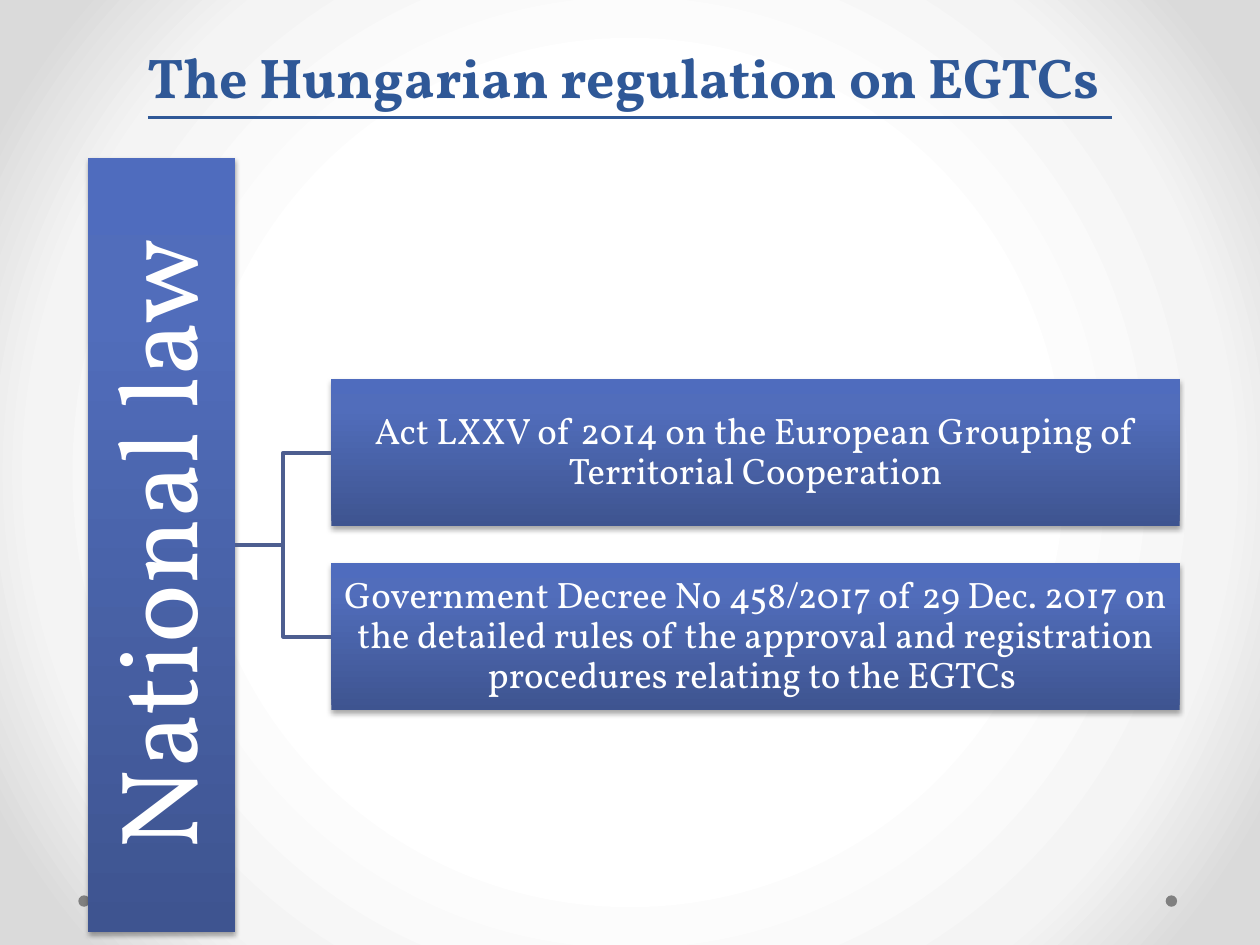
import pptx
import pptx.dml.color
import pptx.enum.shapes
import pptx.enum.text
import pptx.oxml
import pptx.oxml.ns
import pptx.util
from lxml import etree

Cm, Pt = pptx.util.Cm, pptx.util.Pt
SHAPE = pptx.enum.shapes.MSO_SHAPE
ANCHOR = pptx.enum.text.MSO_ANCHOR
qn = pptx.oxml.ns.qn
NS = 'xmlns:a="http://schemas.openxmlformats.org/drawingml/2006/main"'

TITLE = "The Hungarian regulation on EGTCs "
ROOT = "National law"
LAWS = [
    "Act LXXV of 2014 on the European Grouping of Territorial Cooperation",
    "Government Decree No 458/2017 of 29 Dec. 2017 on the detailed rules of "
    "the approval and registration procedures relating to the EGTCs ",
]

FONT = "Vollkorn"
BOX_STOPS = [(0, "3E5490"), (80, "516DBB"), (100, "4F6CBE")]
BG_STOPS = [(50, "FFFFFF"), (76, "F4F4F4"), (92, "DADADA")]
UPWARD = '<a:lin ang="16200000" scaled="0"/>'
RADIAL = ('<a:path path="circle"><a:fillToRect l="50000" t="50000" '
          'r="50000" b="50000"/></a:path>')

# Lengths in cm
SLIDE_W, SLIDE_H = 25.4, 19.05
ROOT_LEFT, ROOT_TOP, ROOT_H = 1.77, 3.18, 15.6
THICK = 2.97
LAW_LEFT, LAW_W, LAW_PITCH = 6.68, 17.1, 3.71
DOT, DOT_TOP, DOT_LEFTS = 0.23, 18.05, (1.58, 23.5)


def rgb(value):
    return pptx.dml.color.RGBColor.from_string(value)


def set_gradient(fill, parent, stops, direction):
    """Give the fill held somewhere inside parent the stops and direction."""
    fill.gradient()
    old = next(parent.iter(qn("a:gradFill")))
    gs = "".join(f'<a:gs pos="{pos * 1000}"><a:srgbClr val="{c}"/></a:gs>'
                 for pos, c in stops)
    new = pptx.oxml.parse_xml(f'<a:gradFill {NS} rotWithShape="1">'
                              f'<a:gsLst>{gs}</a:gsLst>{direction}</a:gradFill>')
    old.getparent().replace(old, new)


def add_shadow(sp):
    sp.shadow.inherit = False
    effects = sp._element.spPr.find(qn("a:effectLst"))
    effects.append(pptx.oxml.parse_xml(
        f'<a:outerShdw {NS} blurRad="{Pt(3.1)}" dist="{Pt(1.8)}" dir="5400000" '
        'rotWithShape="0"><a:srgbClr val="000000"><a:alpha val="35000"/>'
        '</a:srgbClr></a:outerShdw>'))


def write(sp, text, size, color, spacing, anchor):
    tf = sp.text_frame
    tf.word_wrap = True
    tf.vertical_anchor = anchor
    p = tf.paragraphs[0]
    p.text = text
    p.alignment = pptx.enum.text.PP_ALIGN.CENTER
    p.line_spacing = spacing
    p.font.name, p.font.size = FONT, Pt(size)
    p.font.color.rgb = rgb(color)
    return p


def add_box(s, left, top, width, height, text, size, inset):
    sp = s.shapes.add_shape(SHAPE.RECTANGLE, Cm(left), Cm(top), Cm(width), Cm(height))
    set_gradient(sp.fill, sp._element, BOX_STOPS, UPWARD)
    sp.line.fill.background()
    add_shadow(sp)
    write(sp, text, size, "FFFFFF", 0.9, ANCHOR.MIDDLE)
    tf = sp.text_frame
    tf.margin_left = tf.margin_right = tf.margin_top = tf.margin_bottom = Cm(inset)
    return sp


def add_branch(s, root, law):
    c = s.shapes.add_connector(pptx.enum.shapes.MSO_CONNECTOR.ELBOW, 0, 0, 0, 0)
    c.begin_connect(root, 3)
    c.end_connect(law, 1)
    c.line.color.rgb = rgb("4D5E90")
    c.line.width = Pt(2.25)
    etree.SubElement(c._element.spPr, qn("a:effectLst"))


def main():
    prs = pptx.Presentation()
    prs.slide_width, prs.slide_height = Cm(SLIDE_W), Cm(SLIDE_H)
    s = prs.slides.add_slide(prs.slide_layouts[6])
    set_gradient(s.background.fill, s._element, BG_STOPS, RADIAL)

    for left in DOT_LEFTS:
        dot = s.shapes.add_shape(SHAPE.OVAL, Cm(left), Cm(DOT_TOP), Cm(DOT), Cm(DOT))
        dot.shadow.inherit = False
        dot.fill.solid()
        dot.fill.fore_color.rgb = rgb("808080")
        dot.line.fill.background()

    title = s.shapes.add_textbox(Cm(1.27), Cm(0.33), Cm(22.86), Cm(2))
    p = write(title, TITLE, 32, "2F5897", Pt(58), ANCHOR.BOTTOM)
    p.font.bold = p.font.underline = True

    root = add_box(s, ROOT_LEFT, ROOT_TOP, THICK, ROOT_H, ROOT, 63, 0.1)
    root.text_frame._txBody.bodyPr.set("vert", "vert270")

    middle = ROOT_TOP + ROOT_H / 2
    for i, text in enumerate(LAWS):
        center = middle + (i - (len(LAWS) - 1) / 2) * LAW_PITCH
        law = add_box(s, LAW_LEFT, center - THICK / 2, LAW_W, THICK, text, 21, 0.03)
        add_branch(s, root, law)

    prs.save("out.pptx")


if __name__ == "__main__":
    main()
